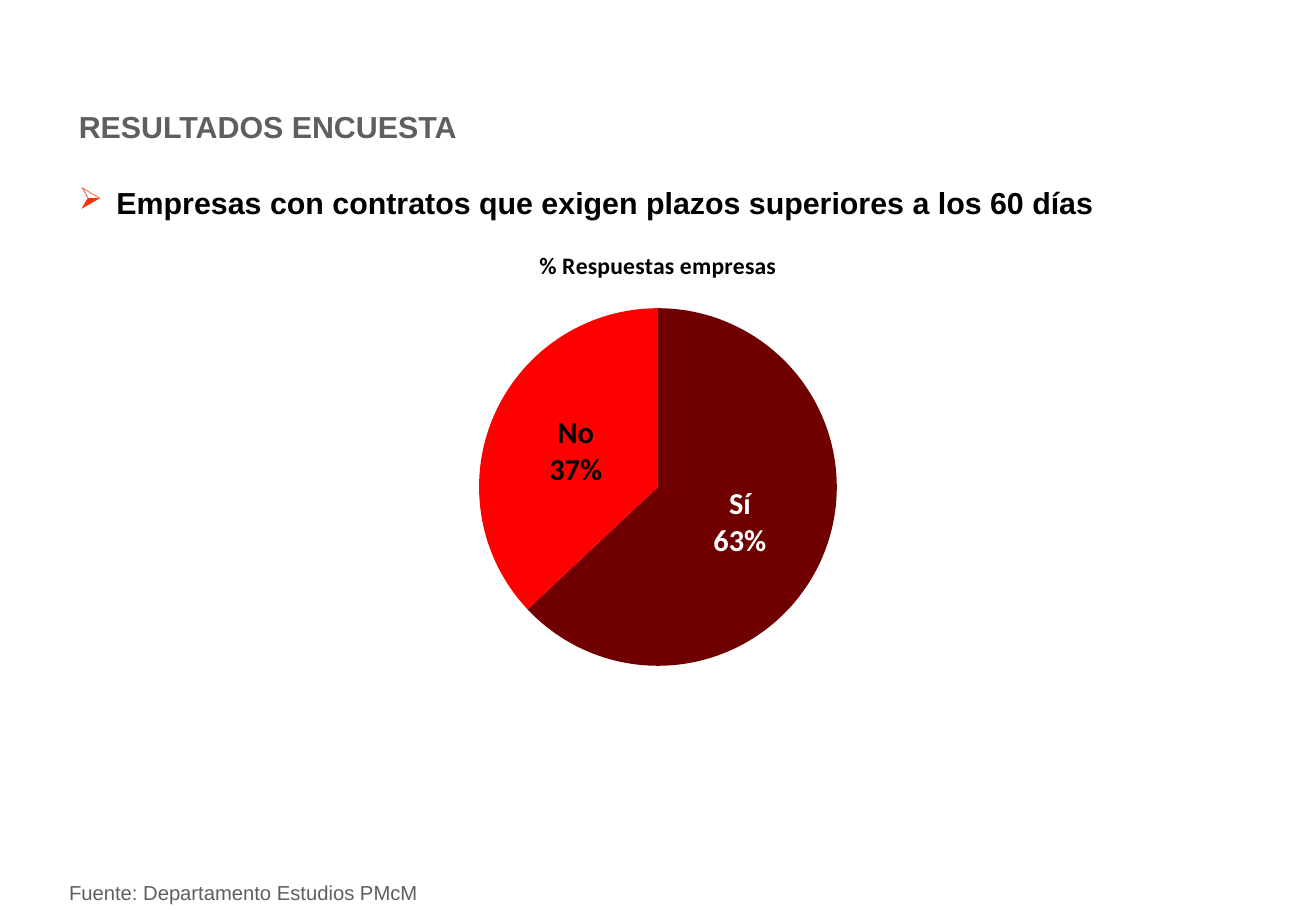
import dataclasses

import lxml.etree
import pptx
import pptx.chart.data
import pptx.chart.chart
import pptx.dml.color
import pptx.enum.chart
import pptx.enum.text
import pptx.oxml.ns
import pptx.slide
import pptx.util

EMU_PER_PX = 9144  # 100 px to the inch
qn = pptx.oxml.ns.qn


@dataclasses.dataclass(frozen=True)
class Theme:
    text_font: str = "Arial"
    chart_font: str = "Calibri"
    grey: str = "5F5F5F"
    black: str = "000000"
    white: str = "FFFFFF"
    bullet: str = "F92E05"
    heading_pt: int = 18
    source_pt: int = 12
    chart_pt: int = 10
    chart_title_pt: int = 14
    label_pt: int = 18


THEME = Theme()


@dataclasses.dataclass(frozen=True)
class TextLine:
    text: str
    x: int
    y: int
    w: int
    h: int
    size: int
    color: str
    bold: bool = True
    bullet: str = ""
    wrap: bool = True


@dataclasses.dataclass(frozen=True)
class Answer:
    name: str
    share: float
    fill: str
    label_color: str


LINES = [
    TextLine("RESULTADOS ENCUESTA", 55, 84, 759, 40, THEME.heading_pt, THEME.grey),
    TextLine("Fuente: Departamento Estudios PMcM", 47, 720, 310, 30,
             THEME.source_pt, THEME.grey, bold=False, wrap=False),
    TextLine("Empresas con contratos que exigen plazos superiores a los 60 días",
             55, 147, 998, 40, THEME.heading_pt, THEME.black, bullet="➢"),
]
ANSWERS = [
    Answer("Sí", 0.63, "700000", THEME.white),
    Answer("No", 0.37, "FF0000", THEME.black),
]
BULLET_INDENT = 31


def px(n: int) -> pptx.util.Emu:
    return pptx.util.Emu(n * EMU_PER_PX)


def rgb(color: str) -> pptx.dml.color.RGBColor:
    return pptx.dml.color.RGBColor.from_string(color)


def style(font, name: str, size: int, color: str, bold: bool) -> None:
    font.name = name
    font.size = pptx.util.Pt(size)
    font.bold = bold
    font.color.rgb = rgb(color)


def add_line(s: pptx.slide.Slide, line: TextLine) -> None:
    sp = s.shapes.add_textbox(px(line.x), px(line.y), px(line.w), px(line.h))
    tf = sp.text_frame
    tf.word_wrap = line.wrap
    p = tf.paragraphs[0]
    if line.bullet:
        pPr = p._p.get_or_add_pPr()
        pPr.set("marL", str(px(BULLET_INDENT)))
        pPr.set("indent", str(-px(BULLET_INDENT)))
        clr = lxml.etree.SubElement(pPr, qn("a:buClr"))
        lxml.etree.SubElement(clr, qn("a:srgbClr")).set("val", THEME.bullet)
        lxml.etree.SubElement(pPr, qn("a:buChar")).set("char", line.bullet)
    r = p.add_run()
    r.text = line.text
    style(r.font, THEME.text_font, line.size, line.color, line.bold)


def fix_plot_area(chart: pptx.chart.chart.Chart) -> None:
    area = chart._chartSpace.find(".//" + qn("c:plotArea"))
    layout = area.find(qn("c:layout"))
    if layout is None:
        layout = lxml.etree.Element(qn("c:layout"))
        area.insert(0, layout)
    manual = lxml.etree.SubElement(layout, qn("c:manualLayout"))
    for tag, val in (("layoutTarget", "inner"), ("xMode", "edge"), ("yMode", "edge"),
                     ("x", "0.29"), ("y", "0.17"), ("w", "0.42"), ("h", "0.8")):
        lxml.etree.SubElement(manual, qn("c:" + tag)).set("val", val)


def add_pie(s: pptx.slide.Slide, answers: list[Answer]) -> None:
    data = pptx.chart.data.CategoryChartData(number_format="0%")
    data.categories = [a.name for a in answers]
    data.add_series("Series 1", [a.share for a in answers])
    chart = s.shapes.add_chart(pptx.enum.chart.XL_CHART_TYPE.PIE,
                               px(191), px(189), px(701), px(372), data).chart
    style(chart.font, THEME.chart_font, THEME.chart_pt, THEME.black, False)
    chart.has_legend = False
    fix_plot_area(chart)

    # Chart title
    chart.has_title = True
    chart.chart_title.include_in_layout = False
    r = chart.chart_title.text_frame.paragraphs[0].add_run()
    r.text = "% Respuestas empresas"
    style(r.font, THEME.chart_font, THEME.chart_title_pt, THEME.black, True)

    # Slices and their labels
    chart.plots[0].vary_by_categories = True
    series = chart.plots[0].series[0]
    center = pptx.enum.chart.XL_LABEL_POSITION.CENTER
    labels = series.data_labels
    labels.number_format = "0%"
    labels.number_format_is_linked = False
    labels.show_value = True
    labels.position = center
    style(labels.font, THEME.chart_font, THEME.label_pt, THEME.black, True)
    for i, answer in enumerate(answers):
        point = series.points[i]
        point.format.fill.solid()
        point.format.fill.fore_color.rgb = rgb(answer.fill)
        if answer.label_color != THEME.black:
            label = point.data_label
            style(label.font, THEME.chart_font, THEME.label_pt, answer.label_color, True)
            label.position = center

    # Category name above the value in every label
    for el in list(series._element.iter(qn("c:showCatName"))):
        el.set("val", "1")
    for el in list(series._element.iter(qn("c:showBubbleSize"))):
        separator = lxml.etree.Element(qn("c:separator"))
        separator.text = "\n"
        el.addnext(separator)


def main() -> None:
    prs = pptx.Presentation()
    prs.slide_width, prs.slide_height = px(1083), px(750)
    s = prs.slides.add_slide(prs.slide_layouts[6])
    for line in LINES:
        add_line(s, line)
    add_pie(s, ANSWERS)
    prs.save("out.pptx")


if __name__ == "__main__":
    main()
